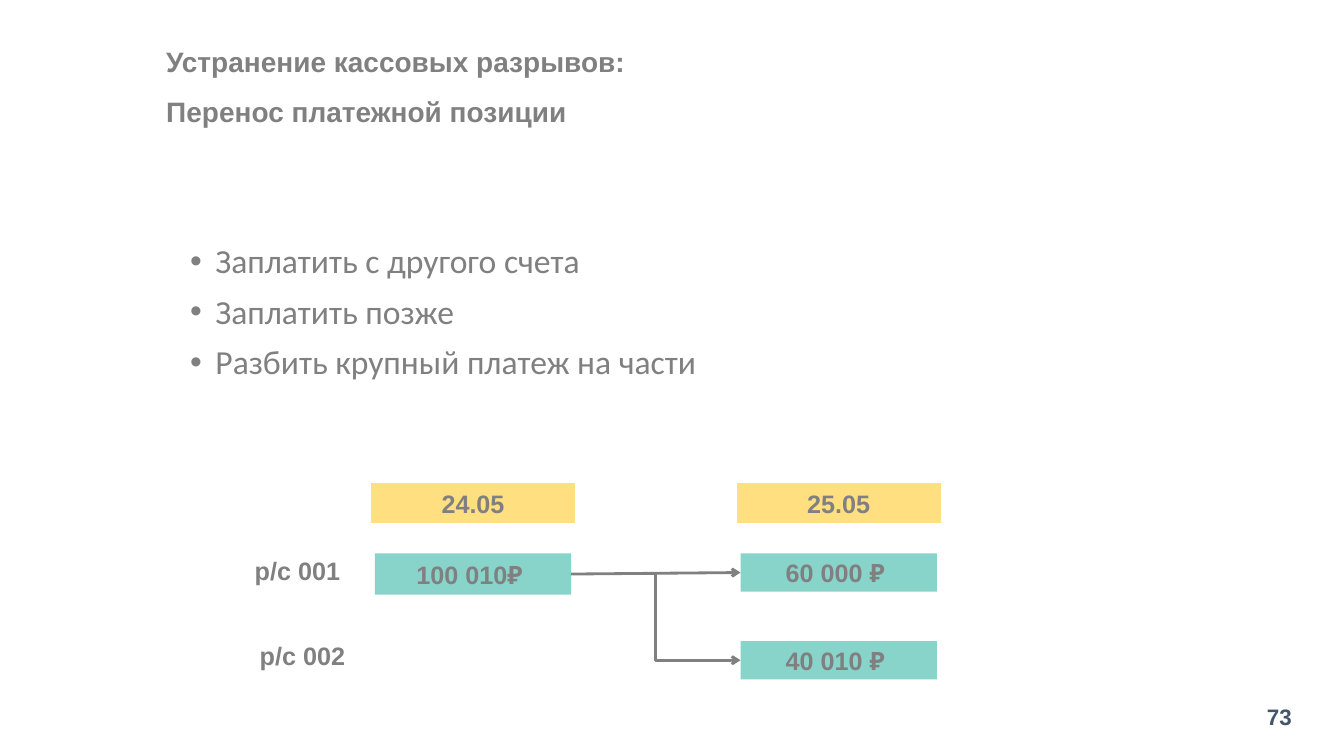
from dataclasses import dataclass
from lxml.etree import SubElement
from pptx import Presentation
from pptx.dml.color import RGBColor
from pptx.enum.shapes import MSO_CONNECTOR, MSO_SHAPE
from pptx.enum.text import MSO_ANCHOR, MSO_AUTO_SIZE, PP_ALIGN
from pptx.oxml.ns import qn
from pptx.shapes.autoshape import Shape
from pptx.slide import Slide
from pptx.util import Inches, Pt


@dataclass(frozen=True)
class Theme:
    head: str = "Arial"
    body: str = "Calibri"
    gray: RGBColor = RGBColor(0x80, 0x80, 0x80)
    navy: RGBColor = RGBColor(0x44, 0x54, 0x6A)
    gold: RGBColor = RGBColor(0xFF, 0xC0, 0x00)
    teal: RGBColor = RGBColor(0x89, 0xD4, 0xCA)
    white: RGBColor = RGBColor(0xFF, 0xFF, 0xFF)
    title: int = 20
    list: int = 24
    label: int = 18
    number: int = 16


@dataclass(frozen=True)
class Box:
    text: str
    left: float
    top: float
    width: float
    height: float


THEME = Theme()
POINTS = ["Заплатить с другого счета", "Заплатить позже", "Разбить крупный платеж на части"]
DATES = [Box("24.05", 3.67, 4.78, 2.05, 0.42), Box("25.05", 7.3, 4.78, 2.05, 0.42)]
SOURCE = Box("100 010₽ ", 3.72, 5.49, 1.95, 0.41)
PARTS = [Box("60 000 ₽ ", 7.35, 5.49, 1.95, 0.38), Box("40 010 ₽ ", 7.35, 6.36, 1.95, 0.38)]
LABELS = [Box("р/с 001", 2.43, 5.46, 1.06, 0.4), Box("р/с 002", 2.48, 6.3, 1.06, 0.4)]


def style(para, size: int, color: RGBColor = THEME.gray, face: str = THEME.head,
          bold: bool = True) -> None:
    font = para.font
    font.size, font.name, font.bold = Pt(size), face, bold
    font.color.rgb = color


def place(box: Box) -> tuple:
    return Inches(box.left), Inches(box.top), Inches(box.width), Inches(box.height)


def add_title(slide: Slide, box: Box) -> None:
    title = slide.shapes.title
    title.left, title.top, title.width, title.height = place(box)
    frame = title.text_frame
    frame.text = box.text
    frame.vertical_anchor = MSO_ANCHOR.MIDDLE
    frame.auto_size = MSO_AUTO_SIZE.NONE
    para = frame.paragraphs[0]
    para.alignment, para.line_spacing = PP_ALIGN.LEFT, 1.5
    style(para, THEME.title)


def add_list(slide: Slide, box: Box, points: list[str]) -> None:
    frame = slide.shapes.add_textbox(*place(box)).text_frame
    frame.word_wrap = True
    frame.text = "\n".join(points)
    for i, para in enumerate(frame.paragraphs):
        para.line_spacing = 0.9
        if i:
            para.space_before = Pt(10)
        props = para._p.get_or_add_pPr()
        props.set("marL", str(Inches(0.25)))
        props.set("indent", str(Inches(-0.25)))
        SubElement(props, qn("a:buFont"), typeface="Arial")
        SubElement(props, qn("a:buChar"), char="•")
        style(para, THEME.list, face=THEME.body, bold=False)


def add_box(slide: Slide, box: Box, color: RGBColor) -> Shape:
    shape = slide.shapes.add_shape(MSO_SHAPE.RECTANGLE, *place(box))
    shape.shadow.inherit = False
    shape.fill.solid()
    shape.fill.fore_color.rgb = color
    shape.line.fill.background()
    frame = shape.text_frame
    frame.text = box.text
    frame.vertical_anchor = MSO_ANCHOR.MIDDLE
    para = frame.paragraphs[0]
    para.alignment = PP_ALIGN.CENTER
    style(para, THEME.label)
    return shape


def add_date(slide: Slide, box: Box) -> None:
    shape = add_box(slide, box, THEME.gold)
    shape.line.color.rgb = THEME.white
    shape.line.width = Pt(1.5)
    color = shape._element.spPr.find(qn("a:solidFill"))[0]
    SubElement(color, qn("a:alpha"), val="50000")


def add_label(slide: Slide, box: Box) -> None:
    frame = slide.shapes.add_textbox(*place(box)).text_frame
    frame.word_wrap = False
    frame.text = box.text
    style(frame.paragraphs[0], THEME.label)


def add_number(slide: Slide, box: Box) -> None:
    frame = slide.shapes.add_textbox(*place(box)).text_frame
    frame.word_wrap = True
    frame.text = box.text
    para = frame.paragraphs[0]
    para.alignment, para.line_spacing = PP_ALIGN.RIGHT, 1.1
    style(para, THEME.number, THEME.navy)


def add_arrow(slide: Slide, kind: MSO_CONNECTOR, start: Shape, end: Shape) -> None:
    arrow = slide.shapes.add_connector(kind, 0, 0, 0, 0)
    arrow.begin_connect(start, 3)
    arrow.end_connect(end, 1)
    arrow.line.color.rgb = THEME.gray
    arrow.line.width = Pt(2)
    SubElement(arrow.line._get_or_add_ln(), qn("a:tailEnd"), type="arrow")
    SubElement(arrow._element.spPr, qn("a:effectLst"))


def main() -> None:
    deck = Presentation()
    deck.slide_width, deck.slide_height = Inches(13.34), Inches(7.5)
    slide = deck.slides.add_slide(deck.slide_layouts[5])
    add_title(slide, Box("Устранение кассовых разрывов:\vПеренос платежной позиции",
                         1.55, 0.05, 10.87, 1.45))
    add_list(slide, Box("", 1.79, 2.38, 9.76, 1.97), POINTS)
    for date in DATES:
        add_date(slide, date)
    for label in LABELS:
        add_label(slide, label)
    start = add_box(slide, SOURCE, THEME.teal)
    for part, kind in zip(PARTS, (MSO_CONNECTOR.STRAIGHT, MSO_CONNECTOR.ELBOW)):
        add_arrow(slide, kind, start, add_box(slide, part, THEME.teal))
    add_number(slide, Box("73", 11.92, 6.9, 1, 0.39))
    deck.save("out.pptx")


if __name__ == "__main__":
    main()
